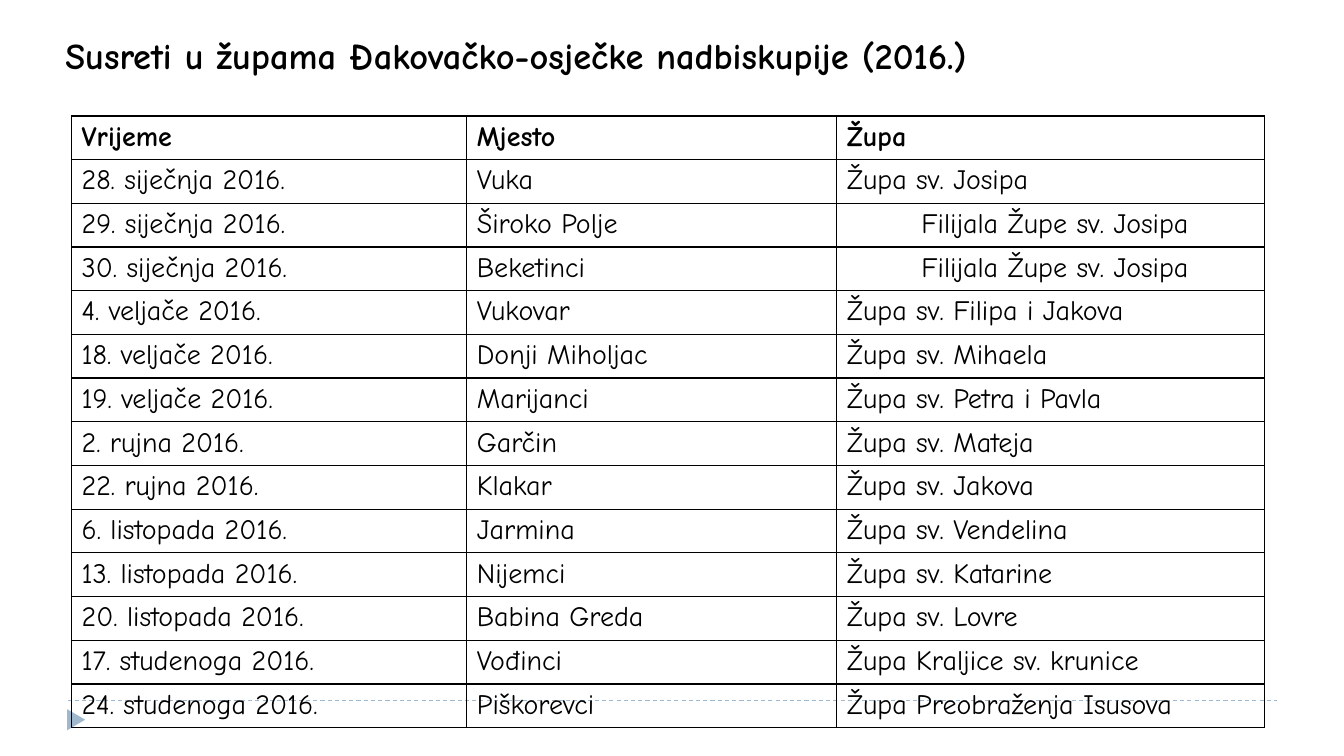
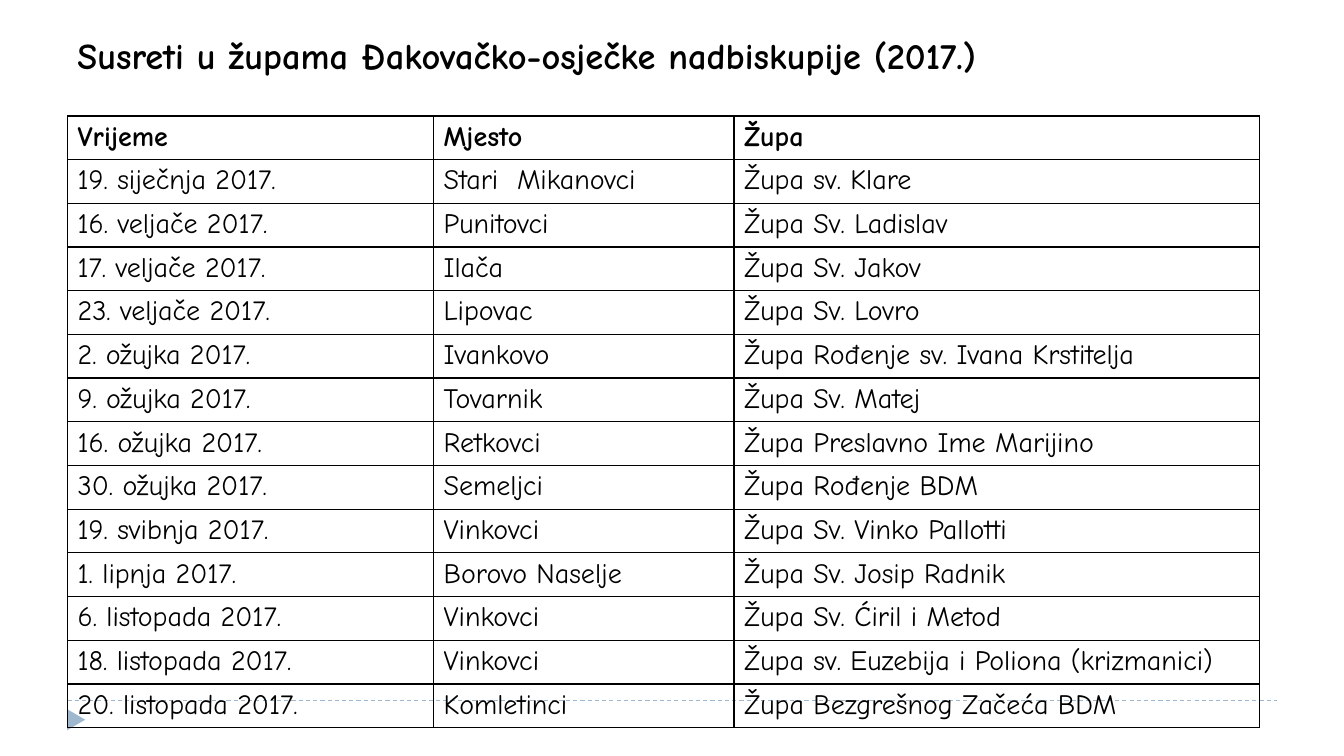
from lxml.etree import SubElement
from pptx import Presentation
from pptx.dml.color import RGBColor
from pptx.enum.dml import MSO_LINE
from pptx.enum.shapes import MSO_CONNECTOR, MSO_SHAPE
from pptx.enum.text import MSO_ANCHOR
from pptx.oxml.ns import qn
from pptx.util import Inches, Pt

COLORS = {"text": "000000", "border": "000000", "accent": "9FB8CD"}
FONT = "Comic Neue"
TABLE_TOP = 1.15
TABLE_HEIGHT = 6.07
BRANCH_INDENT = 0.74
BRANCH_PREFIX = "Filijala"

HEADER = ("Vrijeme", "Mjesto", "Župa")

MEETINGS_2016 = [
    ("28. siječnja 2016.", "Vuka", "Župa sv. Josipa"),
    ("29. siječnja 2016.", "Široko Polje", "Filijala Župe sv. Josipa"),
    ("30. siječnja 2016.", "Beketinci", "Filijala Župe sv. Josipa"),
    ("4. veljače 2016.", "Vukovar", "Župa sv. Filipa i Jakova"),
    ("18. veljače 2016.", "Donji Miholjac", "Župa sv. Mihaela"),
    ("19. veljače 2016.", "Marijanci", "Župa sv. Petra i Pavla"),
    ("2. rujna 2016.", "Garčin", "Župa sv. Mateja"),
    ("22. rujna 2016.", "Klakar", "Župa sv. Jakova"),
    ("6. listopada 2016.", "Jarmina", "Župa sv. Vendelina"),
    ("13. listopada 2016.", "Nijemci", "Župa sv. Katarine"),
    ("20. listopada 2016.", "Babina Greda", "Župa sv. Lovre"),
    ("17. studenoga 2016.", "Vođinci", "Župa Kraljice sv. krunice"),
    ("24. studenoga 2016.", "Piškorevci", "Župa Preobraženja Isusova"),
]

MEETINGS_2017 = [
    ("19. siječnja 2017.", "Stari  Mikanovci", "Župa sv. Klare"),
    ("16. veljače 2017.", "Punitovci", "Župa Sv. Ladislav"),
    ("17. veljače 2017.", "Ilača", "Župa Sv. Jakov"),
    ("23. veljače 2017.", "Lipovac", "Župa Sv. Lovro"),
    ("2. ožujka 2017.", "Ivankovo", "Župa Rođenje sv. Ivana Krstitelja"),
    ("9. ožujka 2017.", "Tovarnik", "Župa Sv. Matej"),
    ("16. ožujka 2017.", "Retkovci", "Župa Preslavno Ime Marijino"),
    ("30. ožujka 2017.", "Semeljci", "Župa Rođenje BDM"),
    ("19. svibnja 2017.", "Vinkovci", "Župa Sv. Vinko Pallotti"),
    ("1. lipnja 2017.", "Borovo Naselje", "Župa Sv. Josip Radnik"),
    ("6. listopada 2017.", "Vinkovci", "Župa Sv. Ćiril i Metod"),
    ("18. listopada 2017.", "Vinkovci", "Župa sv. Euzebija i Poliona (krizmanici)"),
    ("20. listopada 2017.", "Komletinci", "Župa Bezgrešnog Začeća BDM"),
]


def rgb(name):
    return RGBColor.from_string(COLORS[name])


def write_text(text_frame, text, size=20, bold=False, color="text", indent=0):
    paragraph = text_frame.paragraphs[0]
    if indent:
        paragraph._p.get_or_add_pPr().set("marL", str(Inches(indent)))
    run = paragraph.add_run()
    run.text = text
    run.font.name = FONT
    run.font.size = Pt(size)
    run.font.bold = bold
    run.font.color.rgb = rgb(color)


def add_footer(slide):
    """Draw the dashed rule and the small arrow at the foot of the slide."""
    rule = slide.shapes.add_connector(
        MSO_CONNECTOR.STRAIGHT, Inches(0.67), Inches(6.95), Inches(12.67), Inches(6.95))
    rule.line.color.rgb = rgb("accent")
    rule.line.width = Pt(0.75)
    rule.line.dash_style = MSO_LINE.DASH
    SubElement(rule._element.spPr, qn("a:effectLst"))

    arrow = slide.shapes.add_shape(
        MSO_SHAPE.ISOSCELES_TRIANGLE, Inches(0.65), Inches(7.05), Inches(0.21), Inches(0.18))
    arrow.rotation = 90
    arrow.shadow.inherit = False
    arrow.fill.solid()
    arrow.fill.fore_color.rgb = rgb("accent")
    arrow.line.fill.background()


def add_title(slide, text, left):
    box = slide.shapes.add_textbox(Inches(left), Inches(0.28), Inches(12.14), Inches(0.54))
    box.text_frame.word_wrap = True
    box.text_frame.vertical_anchor = MSO_ANCHOR.TOP
    write_text(box.text_frame, text, size=26, bold=True)


def add_borders(cell, width=1):
    properties = cell._tc.get_or_add_tcPr()
    for side in ("lnL", "lnR", "lnT", "lnB"):
        line = SubElement(properties, qn(f"a:{side}"), w=str(Pt(width)))
        fill = SubElement(line, qn("a:solidFill"))
        SubElement(fill, qn("a:srgbClr"), val=COLORS["border"])


def add_meetings_table(slide, meetings, left, column_widths):
    rows = [HEADER, *meetings]
    table = slide.shapes.add_table(
        len(rows), len(HEADER), Inches(left), Inches(TABLE_TOP),
        Inches(sum(column_widths)), Inches(TABLE_HEIGHT)).table
    table.first_row = False
    table.horz_banding = False
    for column, width in zip(table.columns, column_widths):
        column.width = Inches(width)
    for row_index, row in enumerate(rows):
        for column_index, text in enumerate(row):
            cell = table.cell(row_index, column_index)
            add_borders(cell)
            cell.fill.background()
            indent = BRANCH_INDENT if text.startswith(BRANCH_PREFIX) else 0
            write_text(cell.text_frame, text, bold=row_index == 0, indent=indent)


def add_year_slide(presentation, year, meetings, title_left, table_left, column_widths):
    slide = presentation.slides.add_slide(presentation.slide_layouts[6])
    add_footer(slide)
    add_meetings_table(slide, meetings, table_left, column_widths)
    add_title(slide, f"Susreti u župama Đakovačko-osječke nadbiskupije ({year}.)", title_left)


def main():
    presentation = Presentation()
    presentation.slide_width = Inches(13.33)
    presentation.slide_height = Inches(7.5)
    add_year_slide(presentation, 2016, MEETINGS_2016, title_left=0.55,
                   table_left=0.71, column_widths=(3.92, 3.67, 4.24))
    add_year_slide(presentation, 2017, MEETINGS_2017, title_left=0.67,
                   table_left=0.67, column_widths=(3.63, 2.98, 5.21))
    presentation.save("out.pptx")


if __name__ == "__main__":
    main()
